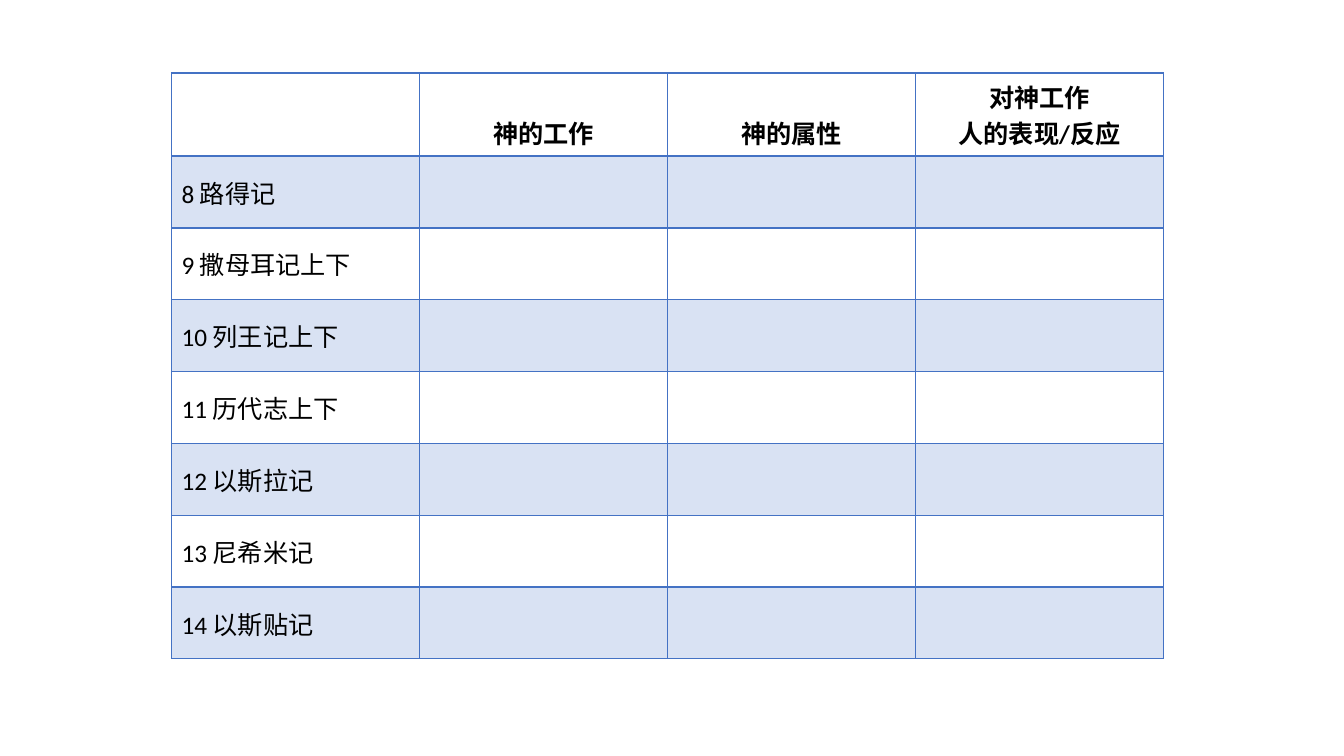
from dataclasses import dataclass

from lxml import etree
from pptx import Presentation
from pptx.dml.color import RGBColor
from pptx.enum.lang import MSO_LANGUAGE_ID
from pptx.enum.text import MSO_ANCHOR, PP_ALIGN
from pptx.oxml.ns import qn
from pptx.table import _Cell
from pptx.util import Cm, Pt

CHINESE = MSO_LANGUAGE_ID.SIMPLIFIED_CHINESE
CENTER, LEFT = PP_ALIGN.CENTER, PP_ALIGN.LEFT
BOTTOM, MIDDLE = MSO_ANCHOR.BOTTOM, MSO_ANCHOR.MIDDLE
BLANK_LAYOUT = 6


@dataclass(frozen=True)
class Theme:
    font: str = "Calibri"
    size: Pt = Pt(18)
    text: RGBColor = RGBColor(0, 0, 0)
    accent: RGBColor = RGBColor(0x44, 0x72, 0xC4)
    band_opacity: int = 20
    thin: Pt = Pt(1)
    thick: Pt = Pt(2)


@dataclass(frozen=True)
class CellStyle:
    align: PP_ALIGN
    anchor: MSO_ANCHOR
    bold: bool = False
    banded: bool = False
    top: Pt = Pt(1)
    bottom: Pt = Pt(1)


THEME = Theme()
HEADERS = ["", "神的工作", "神的属性", "对神工作\n人的表现/反应"]
BOOKS = ["路得记", "撒母耳记上下", "列王记上下", "历代志上下", "以斯拉记", "尼希米记", "以斯贴记"]
FIRST_BOOK = 8
LEFT_EDGE, TOP_EDGE = Cm(4.32), Cm(1.84)
COL_WIDTH, HEADER_HEIGHT, ROW_HEIGHT = Cm(6.25), Cm(1.78), Cm(1.81)


def set_borders(cell: _Cell, top: Pt, bottom: Pt) -> None:
    tc_pr = cell._tc.get_or_add_tcPr()
    widths = {"a:lnL": THEME.thin, "a:lnR": THEME.thin, "a:lnT": top, "a:lnB": bottom}
    for i, (tag, width) in enumerate(widths.items()):
        ln = etree.Element(qn(tag), w=str(int(width)))
        fill = etree.SubElement(ln, qn("a:solidFill"))
        etree.SubElement(fill, qn("a:srgbClr"), val=str(THEME.accent))
        tc_pr.insert(i, ln)


def set_fill(cell: _Cell, banded: bool) -> None:
    if not banded:
        cell.fill.background()
        return
    cell.fill.solid()
    cell.fill.fore_color.rgb = THEME.accent
    color = cell._tc.tcPr.find(f"{qn('a:solidFill')}/{qn('a:srgbClr')}")
    etree.SubElement(color, qn("a:alpha"), val=str(THEME.band_opacity * 1000))


def fill_cell(cell: _Cell, text: str, style: CellStyle) -> None:
    cell.vertical_anchor = style.anchor
    set_fill(cell, style.banded)
    set_borders(cell, style.top, style.bottom)
    if not text:
        return
    cell.text_frame.text = text
    for p in cell.text_frame.paragraphs:
        p.alignment = style.align
        for r in p.runs:
            r.font.name = THEME.font
            r.font.size = THEME.size
            r.font.bold = style.bold
            r.font.color.rgb = THEME.text
            r.font.language_id = CHINESE


def main() -> None:
    prs = Presentation()
    prs.slide_width, prs.slide_height = Cm(33.87), Cm(19.05)
    s = prs.slides.add_slide(prs.slide_layouts[BLANK_LAYOUT])

    rows, cols = len(BOOKS) + 1, len(HEADERS)
    height = HEADER_HEIGHT + ROW_HEIGHT * len(BOOKS)
    table = s.shapes.add_table(rows, cols, LEFT_EDGE, TOP_EDGE, COL_WIDTH * cols, height).table
    table.first_row = table.horz_banding = False
    for column in table.columns:
        column.width = COL_WIDTH
    for i, row in enumerate(table.rows):
        row.height = ROW_HEIGHT if i else HEADER_HEIGHT

    header = CellStyle(CENTER, BOTTOM, bold=True, bottom=THEME.thick)
    for col, text in enumerate(HEADERS):
        fill_cell(table.cell(0, col), text, header)

    for i, book in enumerate(BOOKS):
        style = CellStyle(LEFT, MIDDLE, banded=i % 2 == 0, top=THEME.thin if i else THEME.thick)
        for col in range(cols):
            text = "" if col else f"{FIRST_BOOK + i} {book}"
            fill_cell(table.cell(i + 1, col), text, style)

    prs.save("out.pptx")


if __name__ == "__main__":
    main()
